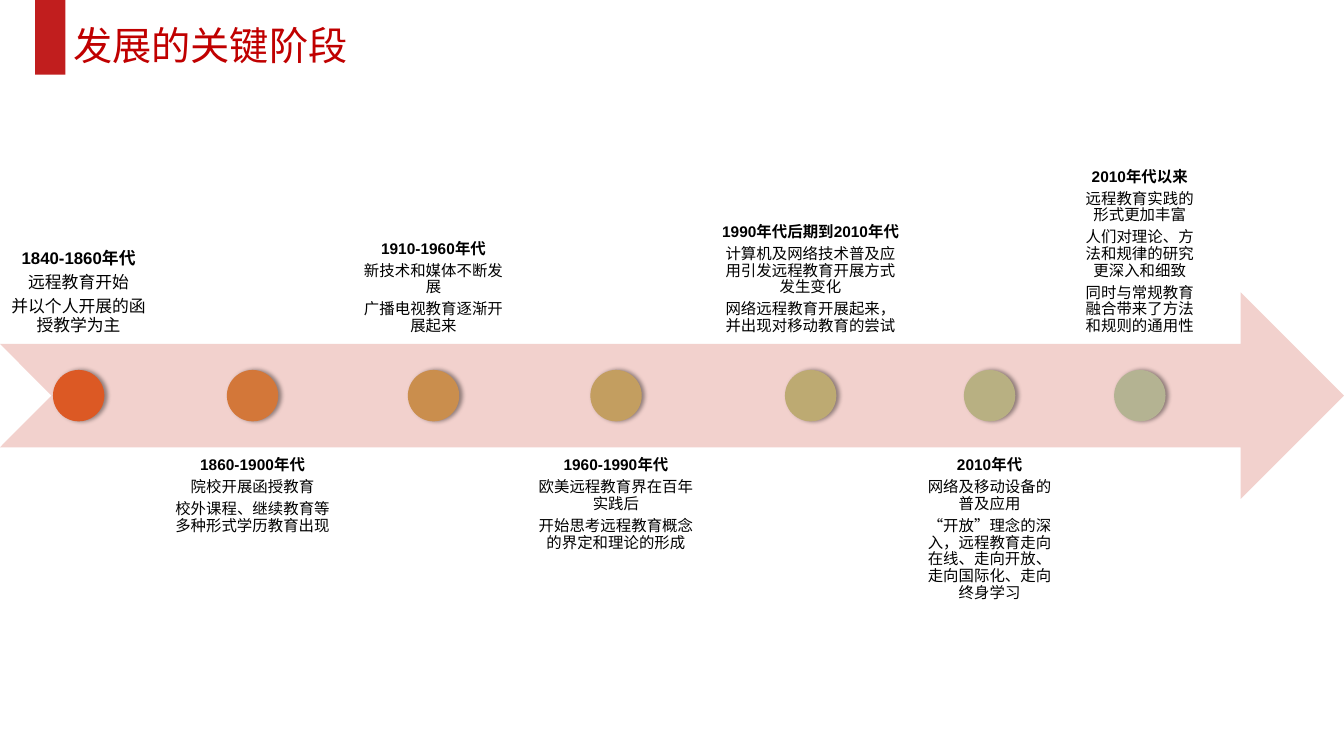
from dataclasses import dataclass

from lxml import etree
from pptx import Presentation
from pptx.dml.color import RGBColor
from pptx.enum.shapes import MSO_SHAPE
from pptx.enum.text import MSO_ANCHOR, PP_ALIGN
from pptx.oxml.ns import qn
from pptx.shapes.autoshape import Shape
from pptx.slide import Slide
from pptx.text.text import _Run
from pptx.util import Inches, Pt

RECT = MSO_SHAPE.RECTANGLE
OVAL = MSO_SHAPE.OVAL
ARROW = MSO_SHAPE.NOTCHED_RIGHT_ARROW
TOP, BOTTOM = MSO_ANCHOR.TOP, MSO_ANCHOR.BOTTOM
CENTER = PP_ALIGN.CENTER

COLORS = {"bar": "C11E1E", "title": "C00000", "arrow": "F2D1CD", "text": "000000"}
LATIN, ASIAN = "Arial", "Noto Sans CJK SC"
WIDTH, HEIGHT = 13.33, 7.5
BAND_TOP, BAND = 2.9, 2.05
ABOVE, BELOW = 1.36, 4.45
DOT = 0.51
INSET = 0.09


@dataclass
class Stage:
    left: float
    width: float
    color: str
    lines: list[str]
    size: int = 11


STAGES = [
    Stage(0, 1.56, "DC5924", ["1840-1860年代", "远程教育开始", "并以个人开展的函授教学为主"], 12),
    Stage(1.63, 1.75, "D37739", [
        "1860-1900年代", "院校开展函授教育", "校外课程、继续教育等多种形式学历教育出现"]),
    Stage(3.45, 1.7, "CA8E4D", [
        "1910-1960年代", "新技术和媒体不断发展", "广播电视教育逐渐开展起来"]),
    Stage(5.23, 1.76, "C39E60", [
        "1960-1990年代", "欧美远程教育界在百年实践后", "开始思考远程教育概念的界定和理论的形成"]),
    Stage(7.06, 1.96, "BDAA72", [
        "1990年代后期到2010年代", "计算机及网络技术普及应用引发远程教育开展方式发生变化",
        "网络远程教育开展起来，并出现对移动教育的尝试"]),
    Stage(9.09, 1.45, "B8B082", [
        "2010年代", "网络及移动设备的普及应用",
        "“开放”理念的深入，远程教育走向在线、走向开放、走向国际化、走向终身学习"]),
    Stage(10.64, 1.33, "B4B392", [
        "2010年代以来", "远程教育实践的形式更加丰富", "人们对理论、方法和规律的研究更深入和细致",
        "同时与常规教育融合带来了方法和规则的通用性"]),
]


def add_form(slide: Slide, kind: int, left: float, top: float,
             width: float, height: float, color: str) -> Shape:
    form = slide.shapes.add_shape(
        kind, Inches(left), Inches(top), Inches(width), Inches(height))
    form.shadow.inherit = False
    form.fill.solid()
    form.fill.fore_color.rgb = RGBColor.from_string(color)
    form.line.fill.background()
    return form


def style(run: _Run, size: int, color: str, latin: str, bold: bool = False) -> None:
    font = run.font
    font.size = Pt(size)
    font.bold = bold
    font.color.rgb = RGBColor.from_string(color)
    font.name = latin
    etree.SubElement(font._element, qn("a:ea"), typeface=ASIAN)


def add_glow(form: Shape) -> None:
    effects = form._element.spPr.find(qn("a:effectLst"))
    shade = etree.SubElement(
        effects, qn("a:outerShdw"), blurRad=str(Pt(3.1)), dist=str(Pt(1.8)),
        dir="0", rotWithShape="0")
    tint = etree.SubElement(shade, qn("a:srgbClr"), val=COLORS["text"])
    etree.SubElement(tint, qn("a:alpha"), val="40000")


def add_title(slide: Slide) -> None:
    add_form(slide, RECT, 0.35, 0, 0.3, 0.74, COLORS["bar"])
    box = slide.shapes.add_textbox(Inches(0.63), Inches(0.16), Inches(3.04), Inches(0.57))
    frame = box.text_frame
    frame.word_wrap = True
    frame.text = "发展的关键阶段"
    style(frame.paragraphs[0].runs[0], 28, COLORS["title"], ASIAN)


def add_stage(slide: Slide, stage: Stage, above: bool) -> None:
    box = slide.shapes.add_textbox(
        Inches(stage.left), Inches(ABOVE if above else BELOW),
        Inches(stage.width), Inches(BAND))
    frame = box.text_frame
    frame.word_wrap = True
    frame.vertical_anchor = BOTTOM if above else TOP
    frame.margin_left = frame.margin_right = Inches(INSET)
    frame.margin_top = frame.margin_bottom = Inches(INSET)
    frame.text = "\n".join(stage.lines)
    for row, para in enumerate(frame.paragraphs):
        para.alignment = CENTER
        para.line_spacing = 0.9
        para.space_after = Pt(0.35 * stage.size)
        style(para.runs[0], stage.size, COLORS["text"], LATIN, row == 0)

    left = stage.left + (stage.width - DOT) / 2
    top = BAND_TOP + (BAND - DOT) / 2
    add_glow(add_form(slide, OVAL, left, top, DOT, DOT, stage.color))


def main() -> None:
    deck = Presentation()
    deck.slide_width, deck.slide_height = Inches(WIDTH), Inches(HEIGHT)
    slide = deck.slides.add_slide(deck.slide_layouts[6])
    add_title(slide)
    add_form(slide, ARROW, 0, BAND_TOP, WIDTH, BAND, COLORS["arrow"])
    for index, stage in enumerate(STAGES):
        add_stage(slide, stage, index % 2 == 0)
    deck.save("out.pptx")


if __name__ == "__main__":
    main()
